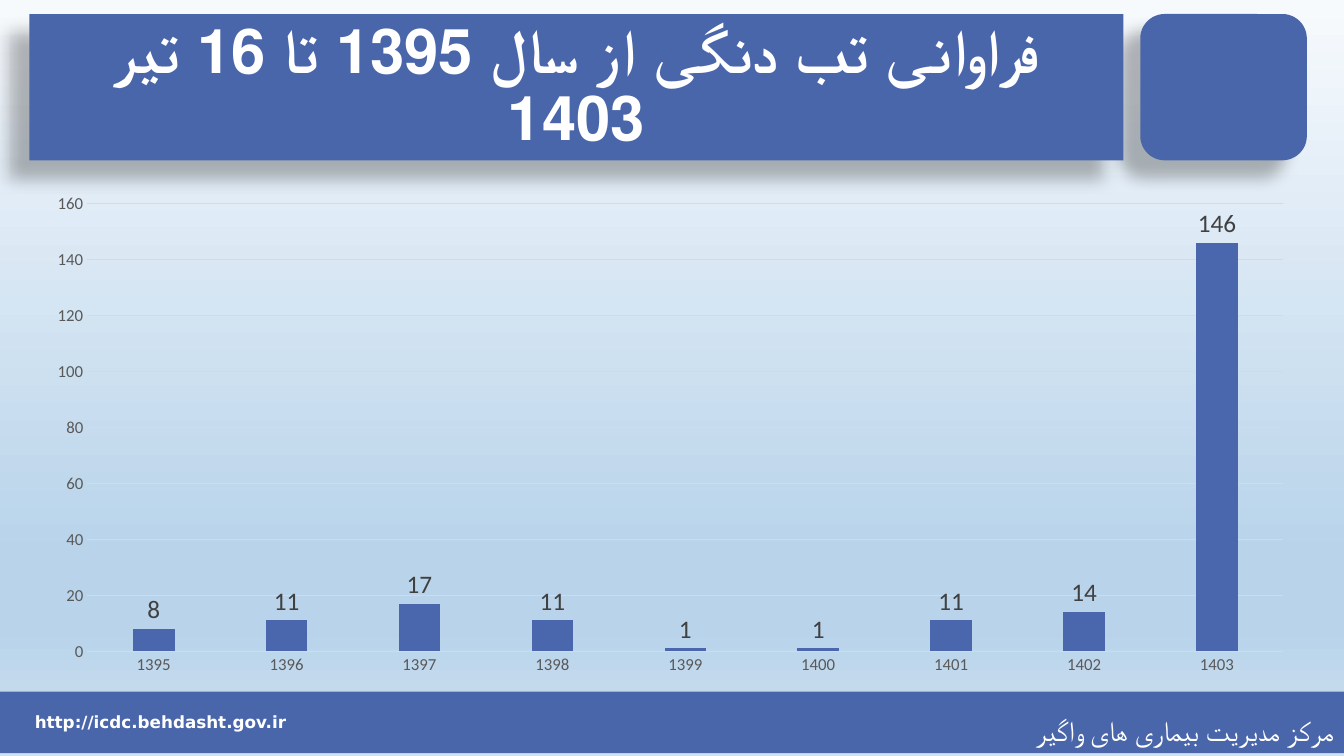
from dataclasses import dataclass
from typing import Optional

from lxml.etree import SubElement
from pptx import Presentation
from pptx.chart.data import CategoryChartData
from pptx.dml.color import RGBColor
from pptx.enum.chart import XL_CHART_TYPE as ChartType
from pptx.enum.chart import XL_LABEL_POSITION as LabelPosition
from pptx.enum.chart import XL_TICK_MARK as TickMark
from pptx.enum.shapes import MSO_SHAPE as Shape
from pptx.enum.text import MSO_ANCHOR as Anchor
from pptx.enum.text import PP_ALIGN as Align
from pptx.oxml.ns import qn
from pptx.util import Pt

COLORS = {
    "band": "4A66AB", "bar": "4A66AC", "white": "FFFFFF", "black": "000000",
    "grid": "D9D9D9", "axis": "595959", "value": "404040",
}
SKY = [(0, "F7FAFD"), (74, "B8D3EA"), (83, "B8D3EA"), (100, "D0E2F1")]
CASES = {"1395": 8, "1396": 11, "1397": 17, "1398": 11, "1399": 1,
         "1400": 1, "1401": 11, "1402": 14, "1403": 146}


@dataclass
class Caption:
    text: str
    size: float
    font: str
    align: Align
    anchor: Anchor = Anchor.MIDDLE
    bold: bool = False
    rtl: bool = False
    spacing: Optional[float] = None


@dataclass
class Panel:
    left: float
    top: float
    width: float
    height: float
    kind: Optional[Shape] = Shape.RECTANGLE  # None means unfilled text
    shadow: bool = False
    caption: Optional[Caption] = None


PANELS = [
    # Header emblem block and title
    Panel(814.5, 10, 119, 104.5, Shape.FLOWCHART_ALTERNATE_PROCESS, shadow=True),
    Panel(21, 10, 781.5, 104.5, shadow=True, caption=Caption(
        "فراوانی تب دنگی از سال 1395 تا 16 تیر 1403", 44, "Calibri",
        Align.CENTER, bold=True, rtl=True, spacing=0.9)),
    # Footer band and web address
    Panel(0, 494, 960, 44, caption=Caption(
        "مرکز مدیریت بیماری های واگیر", 20, "Lato",
        Align.RIGHT, Anchor.TOP, spacing=1.5)),
    Panel(8.5, 501, 212.5, 29.5, None, caption=Caption(
        "http://icdc.behdasht.gov.ir", 12, "DejaVu Sans",
        Align.CENTER, bold=True)),
]


def rgb(name: str) -> RGBColor:
    return RGBColor.from_string(COLORS[name])


def style_font(font, size: float, color: str, face: str = "Calibri") -> None:
    font.size, font.name = Pt(size), face
    font.color.rgb = rgb(color)


def paint_background(slide) -> None:
    fill = slide.background.fill
    fill.gradient()
    fill.gradient_angle = 270
    stops = slide.element.find(".//" + qn("a:gsLst"))
    for old_stop in list(stops):
        stops.remove(old_stop)
    for percent, color in SKY:
        stop = SubElement(stops, qn("a:gs"), pos=str(percent * 1000))
        SubElement(stop, qn("a:srgbClr"), val=color)


def add_soft_shadow(block) -> None:
    effects = block.element.spPr.find(qn("a:effectLst"))
    shadow = SubElement(effects, qn("a:outerShdw"), blurRad=str(Pt(11.8)),
                        dist=str(Pt(19.7)), dir=str(141 * 60000),
                        algn="ctr", rotWithShape="0")
    tint = SubElement(shadow, qn("a:srgbClr"), val=COLORS["black"])
    SubElement(tint, qn("a:alpha"), val="28000")


def write_caption(frame, caption: Caption) -> None:
    frame.word_wrap = True
    frame.vertical_anchor = caption.anchor
    line = frame.paragraphs[0]
    line.text = caption.text
    line.alignment = caption.align
    if caption.spacing:
        line.line_spacing = caption.spacing
    if caption.rtl:
        line._p.get_or_add_pPr().set("rtl", "1")
    style_font(line.font, caption.size, "white", caption.font)
    line.font.bold = caption.bold


def draw_panel(slide, panel: Panel) -> None:
    box = [Pt(v) for v in (panel.left, panel.top, panel.width, panel.height)]
    if panel.kind is None:
        block = slide.shapes.add_textbox(*box)
    else:
        block = slide.shapes.add_shape(panel.kind, *box)
        block.shadow.inherit = False
        block.fill.solid()
        block.fill.fore_color.rgb = rgb("band")
        block.line.fill.background()
    if panel.shadow:
        add_soft_shadow(block)
    if panel.caption:
        write_caption(block.text_frame, panel.caption)


def draw_cases_chart(slide) -> None:
    data = CategoryChartData()
    data.categories = list(CASES)
    data.add_series("Series 1", list(CASES.values()))
    chart = slide.shapes.add_chart(ChartType.COLUMN_CLUSTERED, Pt(23), Pt(131),
                                   Pt(912), Pt(358.5), data).chart
    chart.has_legend = chart.has_title = False
    style_font(chart.font, 10, "black")

    # Axes
    years, counts = chart.category_axis, chart.value_axis
    for axis in (years, counts):
        axis.major_tick_mark = axis.minor_tick_mark = TickMark.NONE
        style_font(axis.tick_labels.font, 12, "axis")
    counts.minimum_scale, counts.maximum_scale, counts.major_unit = 0, 160, 20
    counts.has_major_gridlines = True
    counts.format.line.fill.background()
    for rule in (years.format.line, counts.major_gridlines.format.line):
        rule.color.rgb = rgb("grid")
        rule.width = Pt(0.75)

    # Columns and their values
    plot = chart.plots[0]
    plot.gap_width, plot.overlap, plot.vary_by_categories = 219, -27, False
    cases = plot.series[0]
    cases.format.fill.solid()
    cases.format.fill.fore_color.rgb = rgb("bar")
    labels = cases.data_labels
    labels.show_value = True
    labels.position = LabelPosition.OUTSIDE_END
    style_font(labels.font, 18, "value")


def main() -> None:
    deck = Presentation()
    deck.slide_width, deck.slide_height = Pt(960), Pt(540)
    slide = deck.slides.add_slide(deck.slide_layouts[6])
    paint_background(slide)
    for panel in PANELS:
        draw_panel(slide, panel)
    draw_cases_chart(slide)
    deck.save("out.pptx")


if __name__ == "__main__":
    main()
